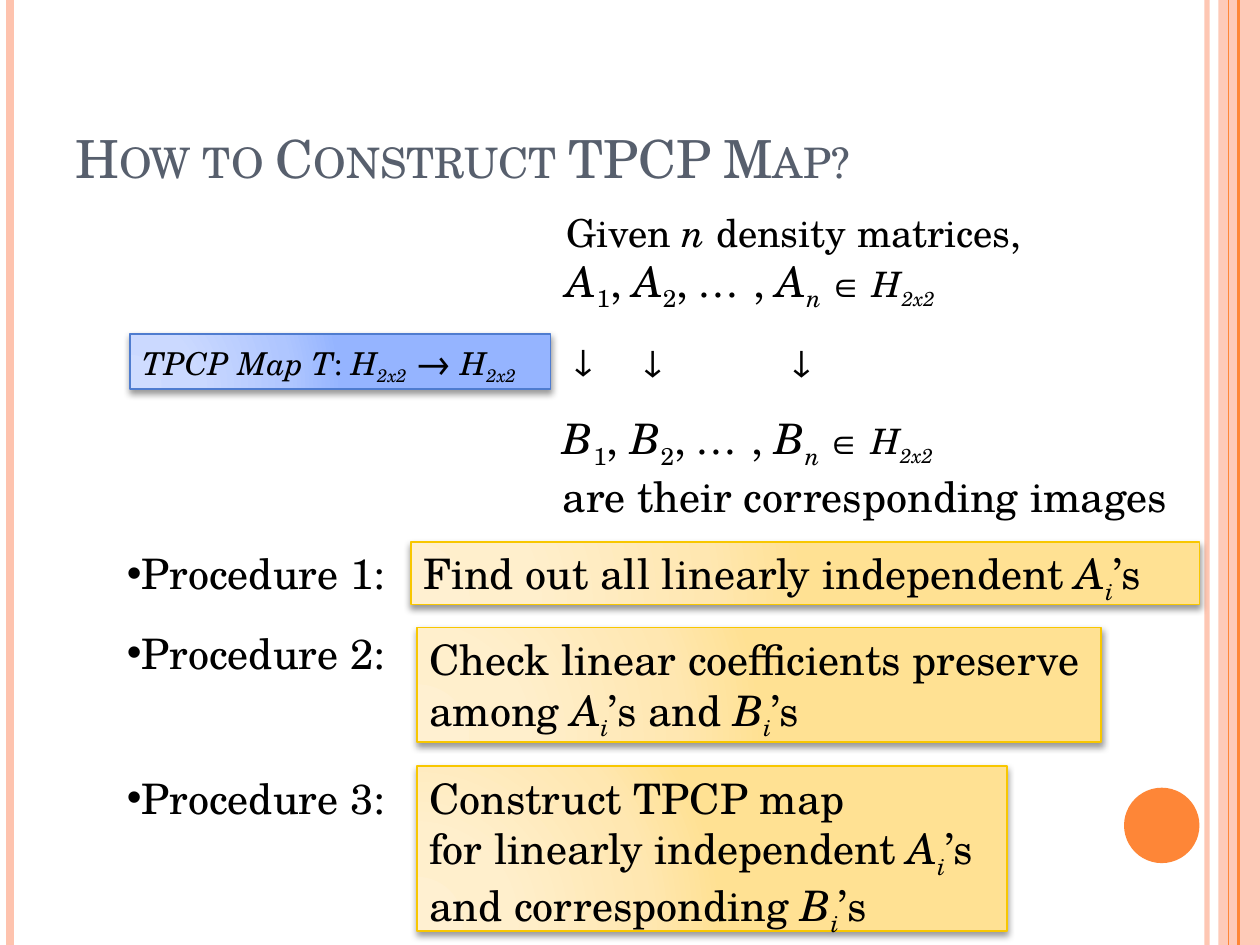
from lxml.etree import SubElement, fromstring
from pptx import Presentation
from pptx.dml.color import RGBColor
from pptx.enum.shapes import MSO_CONNECTOR as Connector, MSO_SHAPE as Preset
from pptx.enum.text import MSO_ANCHOR as Anchor, MSO_AUTO_SIZE as AutoSize
from pptx.oxml.ns import nsdecls, qn
from pptx.util import Cm, Pt

FONT = "TeX Gyre Schola"
WIDTH, HEIGHT = 25.4, 19.05
PEACH, ORANGE = "FEC3AE", "FE8637"
BLUE = (["CFDCFF", "CBD9FF", "AFC6FF", "95B4FF"], "4F7CCF")
YELLOW = (["FFF0D1", "FFEFCC", "FFE7B1", "FFE193"], "F8C700")
STOPS = [0, 30, 75, 100]


def sequence(letter):
    """Return the runs of an indexed list of matrices in H."""
    return [
        (letter, "i", 24), ("1", "_", 24), (", ", "", 24),
        (letter, "i", 24), ("2", "_", 24), (", ", "", 24),
        ("… ", "i", 24), (", ", "", 24), (letter, "i", 24), ("n ", "i_", 24),
        ("∈", "", 20), (" H", "i", 20), ("2x2", "i_", 20),
    ]


def member(letter, ending):
    """Return the runs of one indexed matrix and the words after it."""
    return [(letter, "i", 24), ("i", "i_", 24), (ending, "", 24)]


RULES = [(24.33, PEACH, 3, 93), (0.2, PEACH, 4.5, 100),
         (24.97, ORANGE, 1.5, 100), (24.77, ORANGE, 0.75, 100)]
TITLE = [[("How to Construct TPCP Map?", "", 30)]]
GIVEN = [[("Given ", "", 22), ("n ", "i", 22), ("density matrices,", "", 22)],
         sequence("A")]
IMAGES = [sequence("B"), [("are their corresponding images", "", 24)]]
ARROWS = [(11.3, 6.73), (12.7, 6.76), (15.7, 6.76)]
MAP = [[("TPCP Map T", "i", 18), (": ", "", 18), ("H", "i", 18), ("2x2", "i_", 18),
        (" →", "i", 20), (" H", "i", 18), ("2x2", "i_", 18)]]
PROCEDURES = [
    (10.92, (8.28, 10.92, 15.9, 1.27),
     [[("Find out all linearly independent ", "", 24)] + member("A", "’s")]),
    (12.52, (8.41, 12.65, 13.79, 2.31),
     [[("Check linear coefficients preserve", "", 24)],
      [("among ", "", 24)] + member("A", "’s and ") + member("B", "’s")]),
    (15.44, (8.41, 15.44, 11.89, 3.33),
     [[("Construct TPCP map", "", 24)],
      [("for linearly independent ", "", 24)] + member("A", "’s"),
      [("and corresponding ", "", 24)] + member("B", "’s")]),
]


def color(value):
    """Turn a hex string into a colour."""
    return RGBColor.from_string(value)


def set_alpha(fill, percent):
    """Make a solid fill element partly transparent."""
    SubElement(fill.find(".//" + qn("a:srgbClr")), qn("a:alpha"), val=str(percent * 1000))


def write(shape, paragraphs, ink="000000"):
    """Fill a shape with paragraphs of styled runs."""
    frame = shape.text_frame
    frame.word_wrap = True
    frame.auto_size = AutoSize.SHAPE_TO_FIT_TEXT
    for index, runs in enumerate(paragraphs):
        paragraph = frame.add_paragraph() if index else frame.paragraphs[0]
        paragraph.alignment = 1
        for text, style, size in runs:
            run = paragraph.add_run()
            run.text = text
            run.font.name, run.font.size = FONT, Pt(size)
            run.font.italic = "i" in style
            run.font.color.rgb = color(ink)
            if "_" in style:
                run.font._element.set("baseline", "-25000")
    return frame


def add_text(slide, box, paragraphs, ink="000000"):
    """Add a text box."""
    return write(slide.shapes.add_textbox(*map(Cm, box)), paragraphs, ink)


def add_plain(slide, preset, box, fill):
    """Add a filled shape without outline or shadow."""
    shape = slide.shapes.add_shape(preset, *map(Cm, box))
    shape.shadow.inherit = False
    shape.fill.solid()
    shape.fill.fore_color.rgb = color(fill)
    shape.line.fill.background()
    return shape


def add_rule(slide, x, ink, weight, alpha):
    """Add a vertical line over the full slide height."""
    line = slide.shapes.add_connector(Connector.STRAIGHT, Cm(x), 0, Cm(x), Cm(HEIGHT))
    line.line.color.rgb = color(ink)
    line.line.width = Pt(weight)
    properties = line._element.spPr
    if alpha < 100:
        set_alpha(properties.find(qn("a:ln")), alpha)
    SubElement(properties, qn("a:effectLst"))


def add_panel(slide, box, paragraphs, palette):
    """Add a gradient box with a soft shadow."""
    shades, edge = palette
    shape = slide.shapes.add_shape(Preset.RECTANGLE, *map(Cm, box))
    shape.line.color.rgb = color(edge)
    shape.line.width = Pt(1)
    shape.shadow.inherit = False
    stops = "".join(f'<a:gs pos="{stop * 1000}"><a:srgbClr val="{shade}"/></a:gs>'
                    for stop, shade in zip(STOPS, shades))
    gradient = fromstring(
        f'<a:gradFill {nsdecls("a")} rotWithShape="1"><a:gsLst>{stops}</a:gsLst>'
        '<a:path path="circle"><a:fillToRect l="5000" t="100000" r="120000" b="10000"/>'
        '</a:path></a:gradFill>')
    properties = shape._element.spPr
    properties.find(qn("a:ln")).addprevious(gradient)
    shadow = SubElement(properties.find(qn("a:effectLst")), qn("a:outerShdw"),
                        blurRad=str(Pt(4)), dist=str(Pt(2)), dir="5400000", rotWithShape="0")
    SubElement(shadow, qn("a:srgbClr"), val="000000")
    set_alpha(shadow, 40)
    write(shape, paragraphs).vertical_anchor = Anchor.TOP


def main():
    """Build and save the slide."""
    presentation = Presentation()
    presentation.slide_width, presentation.slide_height = Cm(WIDTH), Cm(HEIGHT)
    slide = presentation.slides.add_slide(presentation.slide_layouts[6])

    band = add_plain(slide, Preset.RECTANGLE, (24.56, 0, 0.84, HEIGHT), PEACH)
    set_alpha(band._element.spPr, 87)
    for rule in RULES:
        add_rule(slide, *rule)
    add_plain(slide, Preset.OVAL, (22.66, 15.88, 1.52, 1.52), ORANGE)

    title = add_text(slide, (1.27, 0.76, 20.75, 3.18), TITLE, "575F6D")
    title.auto_size = AutoSize.NONE
    title.vertical_anchor = Anchor.BOTTOM
    title.paragraphs[0].line_spacing = 1.5
    title.paragraphs[0].runs[0].font._element.set("cap", "small")

    add_text(slide, (11.18, 4.09, 10.21, 2.24), GIVEN)
    add_text(slide, (11.1, 8.2, 12.8, 2.31), IMAGES)
    for x, y in ARROWS:
        add_text(slide, (x, y, 0.99, 1.02), [[("↓", "", 18)]])
    add_panel(slide, (2.62, 6.73, 8.48, 1.12), MAP, BLUE)

    for number, (top, box, paragraphs) in enumerate(PROCEDURES, 1):
        label = add_text(slide, (2.31, top, 8.2, 1.27), [[(f"Procedure {number}:", "", 24)]])
        properties = label.paragraphs[0]._p.get_or_add_pPr()
        SubElement(properties, qn("a:buFont"), typeface="Arial")
        SubElement(properties, qn("a:buChar"), char="•")
        add_panel(slide, box, paragraphs, YELLOW)

    presentation.save("out.pptx")


if __name__ == "__main__":
    main()
